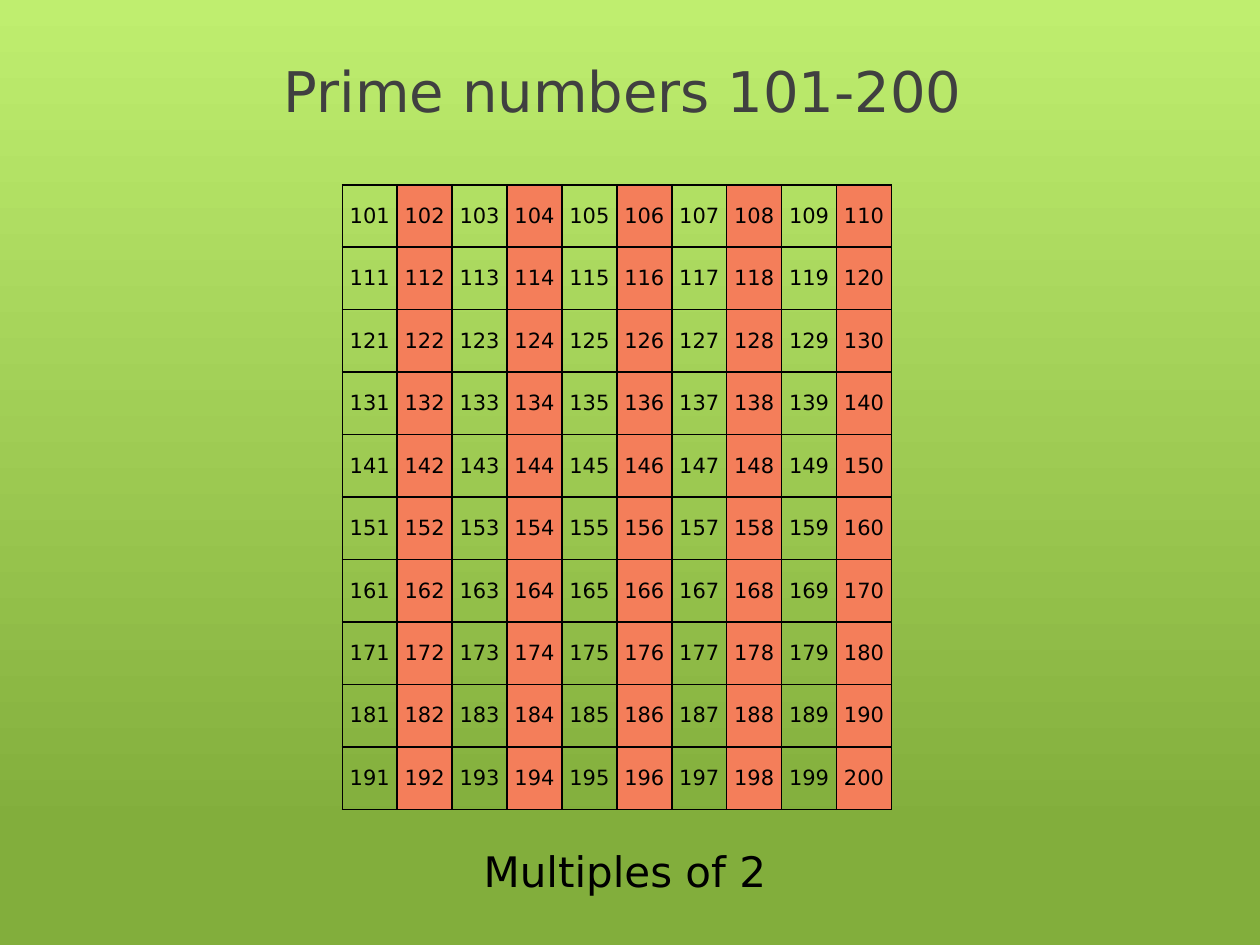
from dataclasses import dataclass

from lxml import etree
from pptx import Presentation
from pptx.dml.color import RGBColor
from pptx.enum import text as t
from pptx.oxml import ns
from pptx.util import Pt

LIGHT_GREEN = RGBColor(0xBF, 0xEE, 0x6F)
DARK_GREEN = RGBColor(0x82, 0xAE, 0x3C)
CORAL = RGBColor(0xF4, 0x7E, 0x5A)
GREY = RGBColor(0x40, 0x40, 0x40)
BLACK = RGBColor(0, 0, 0)
FONT = "DejaVu Sans"
NO_GRID_STYLE = "{2D5ABB26-0587-4C30-8999-92F81FD0307C}"

FIRST_NUMBER = 101
SIDE = 10
FACTOR = 2
COLUMN_WIDTH = Pt(31.4)
ROW_HEIGHT = Pt(35.7)


@dataclass(frozen=True)
class Label:
    words: str
    left: float
    top: float
    width: float
    height: float
    size: float
    color: RGBColor
    align: t.PP_ALIGN
    anchor: t.MSO_ANCHOR
    autofit: t.MSO_AUTO_SIZE


LABELS = (
    Label(" Prime numbers 101-200", 70.6, 15.1, 560.9, 72.7, 32, GREY,
          t.PP_ALIGN.CENTER, t.MSO_ANCHOR.MIDDLE, t.MSO_AUTO_SIZE.NONE),
    Label(f"Multiples of {FACTOR}", 269.3, 479.5, 254.9, 36, 24, BLACK,
          t.PP_ALIGN.LEFT, t.MSO_ANCHOR.TOP, t.MSO_AUTO_SIZE.SHAPE_TO_FIT_TEXT),
)


def style_paragraph(paragraph, size: float, color: RGBColor, align: t.PP_ALIGN) -> None:
    paragraph.alignment = align
    for run in paragraph.runs:
        run.font.name = FONT
        run.font.size = Pt(size)
        run.font.color.rgb = color


def paint_background(slide) -> None:
    fill = slide.background.fill
    fill.gradient()
    fill.gradient_angle = 270
    for stop, position, color in zip(fill.gradient_stops, (0, 0.88), (LIGHT_GREEN, DARK_GREEN)):
        stop.position = position
        stop.color.rgb = color


def draw_label(slide, label: Label) -> None:
    box = slide.shapes.add_textbox(
        Pt(label.left), Pt(label.top), Pt(label.width), Pt(label.height))
    frame = box.text_frame
    frame.word_wrap = True
    frame.auto_size = label.autofit
    frame.vertical_anchor = label.anchor
    frame.text = label.words
    style_paragraph(frame.paragraphs[0], label.size, label.color, label.align)


def add_borders(cell) -> None:
    properties = cell._tc.get_or_add_tcPr()
    for edge in ("a:lnL", "a:lnR", "a:lnT", "a:lnB"):
        border = etree.SubElement(properties, ns.qn(edge), w=str(Pt(1)))
        solid = etree.SubElement(border, ns.qn("a:solidFill"))
        etree.SubElement(solid, ns.qn("a:srgbClr"), val=str(BLACK))


def draw_number(cell, number: int) -> None:
    cell.margin_left = cell.margin_right = Pt(2.9)
    cell.margin_top = cell.margin_bottom = Pt(3.6)
    cell.vertical_anchor = t.MSO_ANCHOR.MIDDLE
    cell.text_frame.text = str(number)
    style_paragraph(cell.text_frame.paragraphs[0], 12, BLACK, t.PP_ALIGN.CENTER)
    add_borders(cell)
    if number % FACTOR == 0:
        cell.fill.solid()
        cell.fill.fore_color.rgb = CORAL
    else:
        cell.fill.background()


def draw_number_grid(slide) -> None:
    grid = slide.shapes.add_table(
        SIDE, SIDE, Pt(195.6), Pt(105.6), COLUMN_WIDTH * SIDE, ROW_HEIGHT * SIDE).table
    grid.first_row = False
    grid.horz_banding = False
    grid._tbl.tblPr.find(ns.qn("a:tableStyleId")).text = NO_GRID_STYLE
    for column in grid.columns:
        column.width = COLUMN_WIDTH
    for row in grid.rows:
        row.height = ROW_HEIGHT
    for number, cell in enumerate(grid.iter_cells(), FIRST_NUMBER):
        draw_number(cell, number)


def main() -> None:
    deck = Presentation()
    deck.slide_width, deck.slide_height = Pt(720), Pt(540)
    slide = deck.slides.add_slide(deck.slide_layouts[6])
    paint_background(slide)
    title, caption = LABELS
    draw_label(slide, title)
    draw_number_grid(slide)
    draw_label(slide, caption)
    deck.save("out.pptx")


if __name__ == "__main__":
    main()
